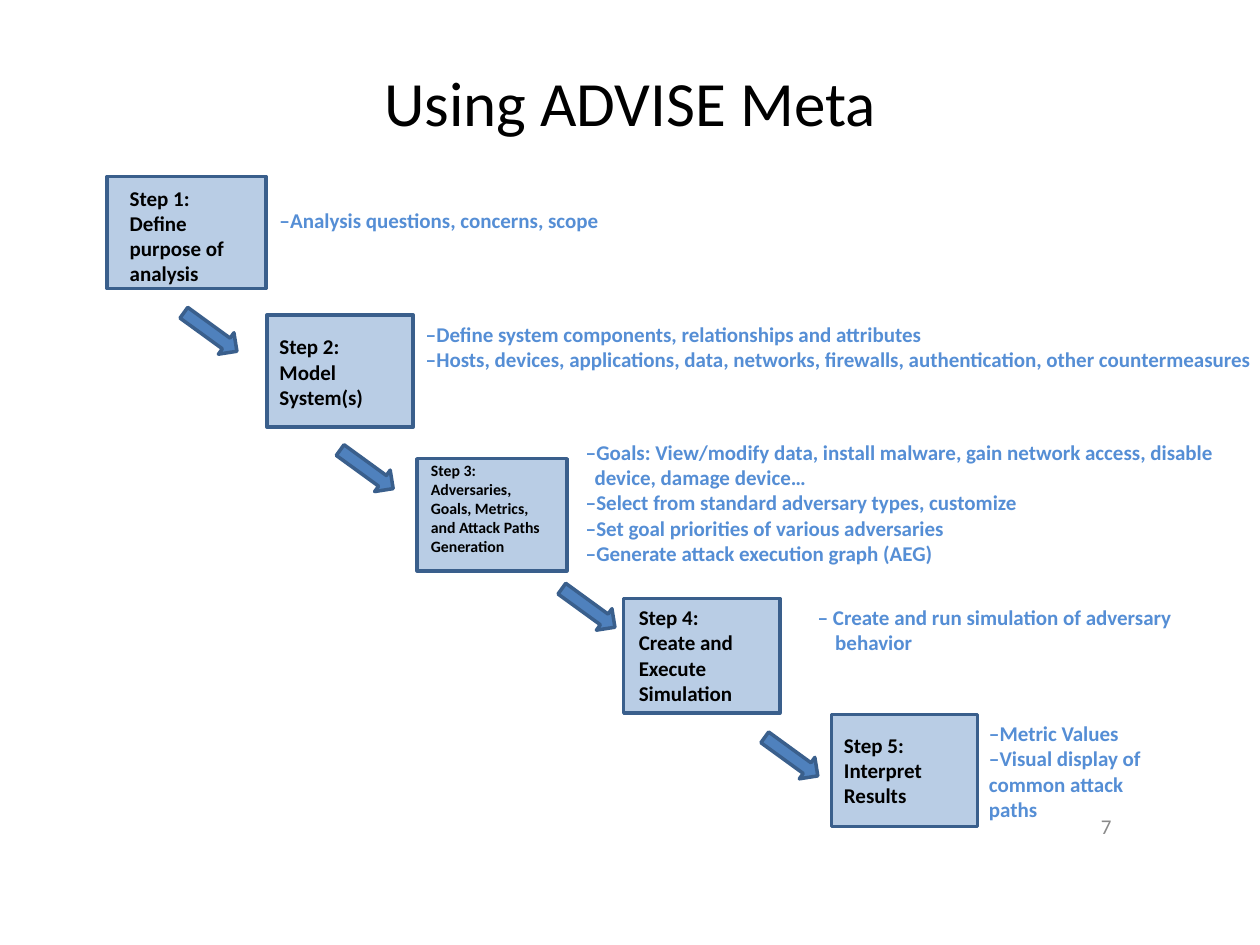
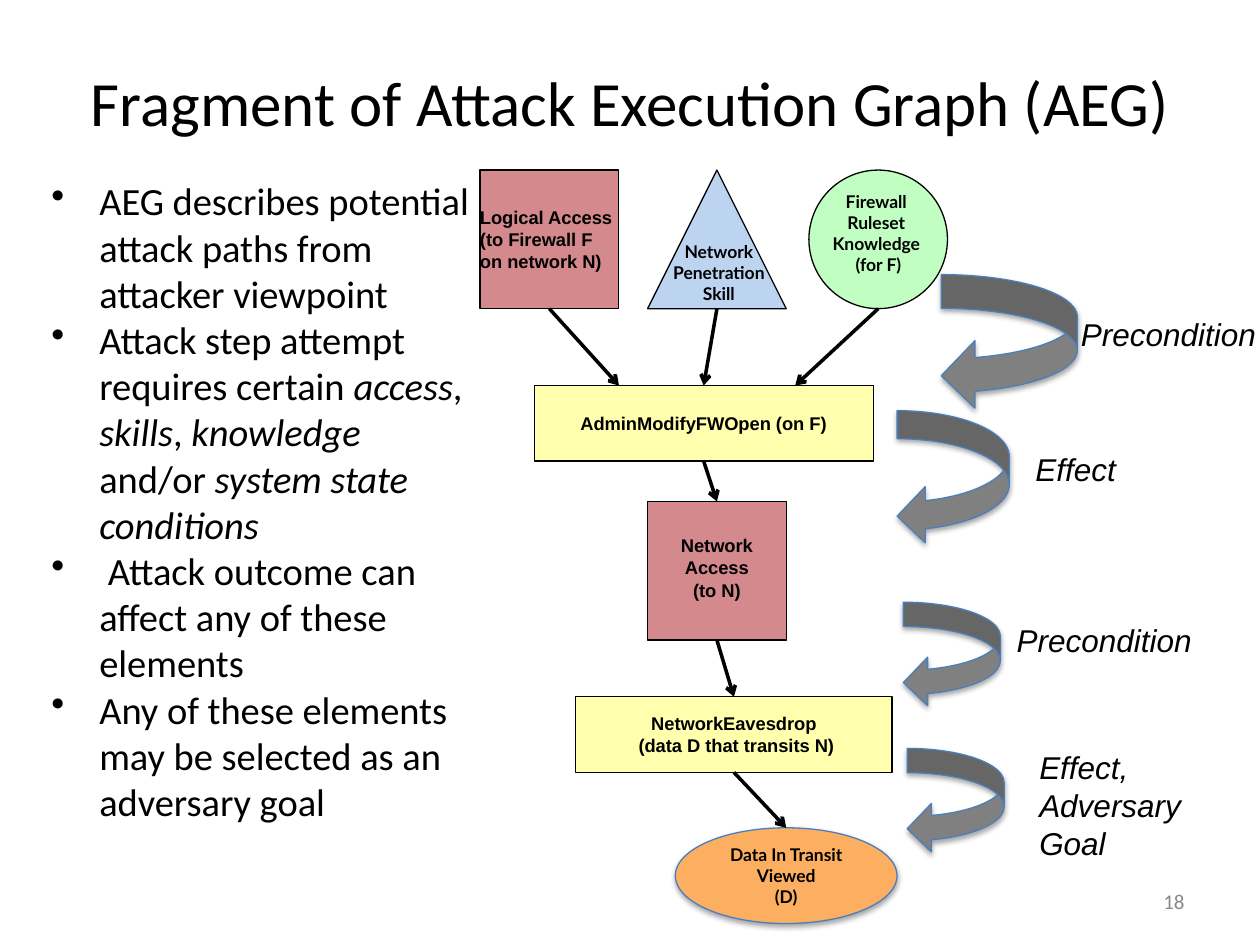
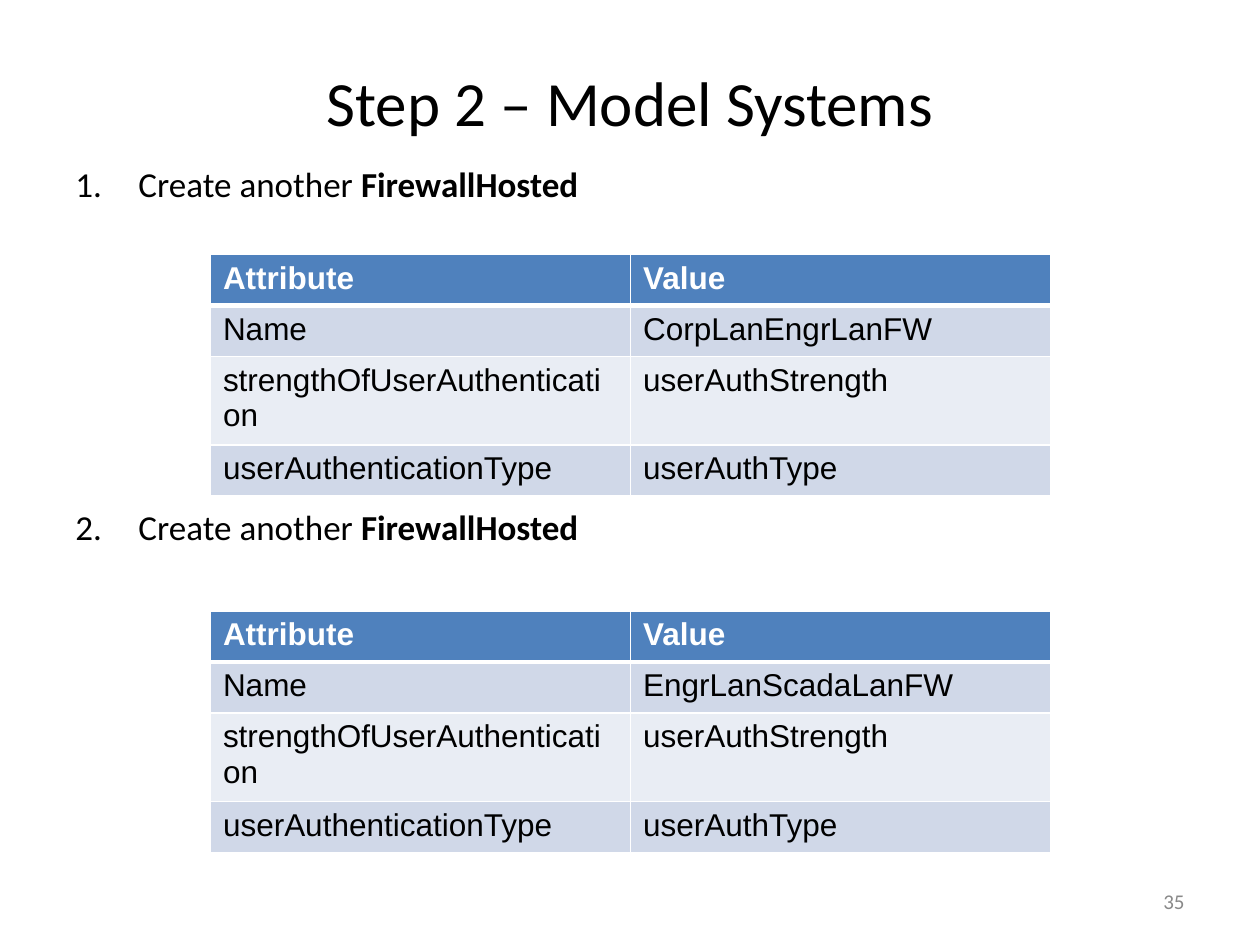
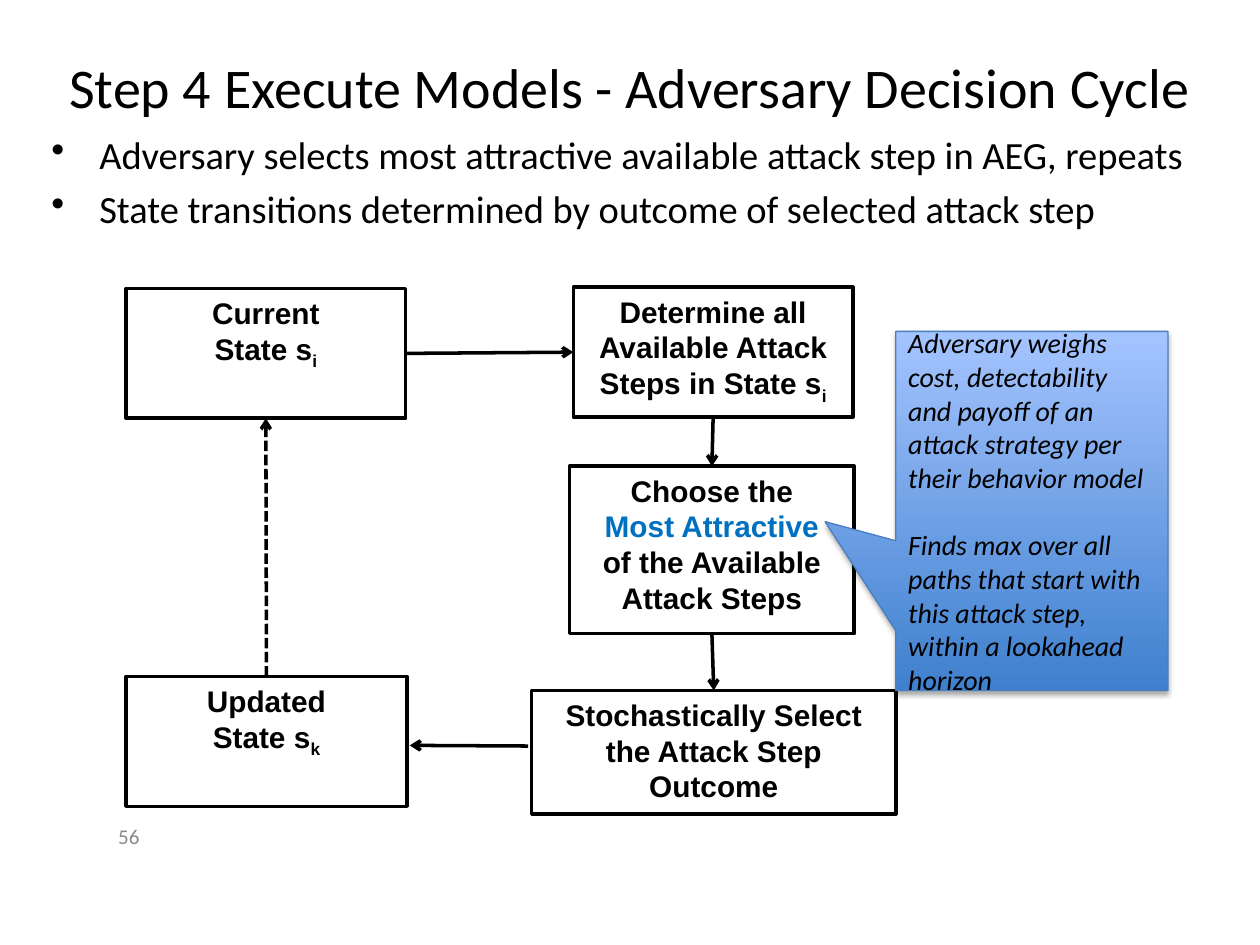
from dataclasses import dataclass

from lxml.etree import SubElement
from pptx import Presentation
from pptx.dml.color import RGBColor
from pptx.enum.dml import MSO_LINE
from pptx.enum.shapes import MSO_CONNECTOR, MSO_SHAPE
from pptx.enum.text import MSO_ANCHOR, PP_ALIGN
from pptx.oxml.ns import qn
from pptx.util import Inches, Pt

SLIDE_WIDTH, SLIDE_HEIGHT = Inches(10), Inches(7.5)
COLUMN, ROW = SLIDE_WIDTH // 100, SLIDE_HEIGHT // 75

BLACK = RGBColor(0x00, 0x00, 0x00)
WHITE = RGBColor(0xFF, 0xFF, 0xFF)
NUMBER_GRAY = RGBColor(0x89, 0x89, 0x89)
ARROW_BLUE = RGBColor(0x4F, 0x81, 0xBD)
STEP_BLUE = RGBColor(0xB9, 0xCD, 0xE5)
STEP_EDGE = RGBColor(0x3A, 0x5F, 0x8C)
NOTE_BLUE = RGBColor(0x55, 0x8E, 0xD5)
ACCENT_EDGE = RGBColor(0x4B, 0x7E, 0xBC)
ATTACK_YELLOW = RGBColor(0xFF, 0xFF, 0xAD)
ACCESS_RED = RGBColor(0xD4, 0x89, 0x8C)
SKILL_BLUE = RGBColor(0xBC, 0xD4, 0xF0)
KNOWLEDGE_GREEN = RGBColor(0xC0, 0xFF, 0xC1)
GOAL_ORANGE = RGBColor(0xFD, 0xAF, 0x61)
CURVE_GRAY = RGBColor(0x80, 0x80, 0x80)
BAND_DARK = RGBColor(0xD0, 0xD8, 0xE8)
BAND_LIGHT = RGBColor(0xE9, 0xED, 0xF4)
HIGHLIGHT_BLUE = RGBColor(0x00, 0x70, 0xC0)
CALLOUT_DARK = RGBColor(0x3F, 0x80, 0xCE)
CALLOUT_LIGHT = RGBColor(0xA4, 0xC4, 0xFF)

DEFAULT_INSETS = (1, 0.5, 1, 0.5)
NODE_TEXT = dict(size=10.5, font="Arial", bold=True, align=PP_ALIGN.CENTER)
LATO_TEXT = dict(NODE_TEXT, size=10, font="Lato")
CYCLE_TEXT = dict(NODE_TEXT, size=17)
NOTE_TEXT = dict(size=12, bold=True, color=NOTE_BLUE)
LABEL_TEXT = dict(size=18, font="Arial", italic=True)
BULLET = ("buChar", "char", "•")
NUMBER = ("buAutoNum", "type", "arabicPeriod")


@dataclass
class Box:
    left: float
    top: float
    width: float
    height: float

    def inside(self, left, top, width, height):
        return Box(self.left + left, self.top + top, width, height)

    def at(self, across, down):
        return (round((self.left + across * self.width) * COLUMN),
                round((self.top + down * self.height) * ROW))

    def frame(self):
        return (*self.at(0, 0), round(self.width * COLUMN), round(self.height * ROW))


@dataclass
class Step:
    box: tuple
    lines: list
    note_box: tuple
    notes: list
    arrow: tuple = None
    insets: tuple = (1.1, 0.5, 1, 0)
    size: float = 12
    hang: float = 0
    note_insets: tuple = DEFAULT_INSETS


STEPS = [
    Step((0, 0, 12.6, 8.9), ["Step 1:", "Define purpose of analysis"],
         (12.7, 2, 36, 3), ["‒Analysis questions, concerns, scope"],
         arrow=(5.6, 11.3), insets=(1.8, 0.7, 0.7, 0)),
    Step((12.7, 11, 11.6, 8.9), ["Step 2:", "Model System(s)"],
         (24.3, 11, 67.2, 5.1),
         ["‒Define system components, relationships and attributes",
          "‒Hosts, devices, applications, data, networks, firewalls, "
          "authentication, other countermeasures"],
         arrow=(18, 22.2), insets=(1, 1.5, 1, 0), note_insets=(1, 0.5, 0, 0.5)),
    Step((24.6, 22.4, 11.9, 8.9),
         ["Step 3:", "Adversaries, Goals, Metrics, and Attack Paths Generation"],
         (37, 20.4, 54.5, 13),
         ["‒Goals: View/modify data, install malware, gain network access, disable\n"
          "device, damage device…",
          "‒Select from standard adversary types, customize",
          "‒Set goal priorities of various adversaries",
          "‒Generate attack execution graph (AEG)"],
         arrow=(35.6, 33.2), insets=(1.1, 0.2, 1, 0), size=9, hang=0.7),
    Step((41, 33.5, 12.4, 9.1), ["Step 4:", "Create and Execute Simulation"],
         (55.4, 33.5, 36.1, 7.1),
         ["‒ Create and run simulation of adversary\nbehavior"],
         arrow=(51.7, 45), insets=(1.2, 0.5, 1.3, 0), hang=1.4),
    Step((57.5, 42.7, 11.6, 8.9), ["Step 5: Interpret Results"],
         (69, 42.7, 16.2, 9.1),
         ["‒Metric Values", "‒Visual display of common attack paths"],
         insets=(1, 1.4, 0.5, 0)),
]


def write(frame, paragraphs, size=12, font="Calibri", color=BLACK, bold=False,
          italic=False, align=PP_ALIGN.LEFT, anchor=MSO_ANCHOR.TOP,
          insets=DEFAULT_INSETS, bullet=None, hang=0, gap=0):
    frame.word_wrap = True
    frame.vertical_anchor = anchor
    left, top, right, bottom = insets
    frame.margin_left, frame.margin_right = round(left * COLUMN), round(right * COLUMN)
    frame.margin_top, frame.margin_bottom = round(top * ROW), round(bottom * ROW)
    for index, content in enumerate(paragraphs):
        paragraph = frame.paragraphs[0] if index == 0 else frame.add_paragraph()
        properties = paragraph._p.get_or_add_pPr()
        if hang:
            properties.set("marL", str(round(hang * COLUMN)))
            properties.set("indent", str(-round(hang * COLUMN)))
        if bullet:
            tag, name, value = bullet
            SubElement(properties, qn("a:" + tag)).set(name, value)
        paragraph.alignment = align
        if index and gap:
            paragraph.space_before = Pt(gap)
        runs = [(content, {})] if isinstance(content, str) else content
        for text, change in runs:
            for line_index, line in enumerate(text.split("\n")):
                if line_index:
                    paragraph.add_line_break()
                if not line:
                    continue
                run = paragraph.add_run()
                run.text = line
                run.font.name = font
                run.font.size = Pt(size)
                run.font.bold = change.get("bold", bold)
                run.font.italic = change.get("italic", italic)
                run.font.color.rgb = change.get("color", color)
                if "baseline" in change:
                    run.font._element.set("baseline", str(change["baseline"]))


def add_text(slide, box, paragraphs, **text_format):
    write(slide.shapes.add_textbox(*box.frame()).text_frame, paragraphs, **text_format)


def add_shadow(shape):
    effects = shape._element.spPr.find(qn("a:effectLst"))
    shadow = SubElement(effects, qn("a:outerShdw"), blurRad=str(Pt(3.1)),
                        dist=str(Pt(1.8)), dir="5400000", rotWithShape="0")
    color = SubElement(shadow, qn("a:srgbClr"), val=str(BLACK))
    SubElement(color, qn("a:alpha"), val="35000")


def add_box(slide, kind, box, fill, edge=BLACK, edge_width=0.75, shadow=False,
            paragraphs=(), **text_format):
    shape = slide.shapes.add_shape(kind, *box.frame())
    shape.shadow.inherit = False
    shape.fill.solid()
    shape.fill.fore_color.rgb = fill
    shape.line.color.rgb = edge
    shape.line.width = Pt(edge_width)
    if shadow:
        add_shadow(shape)
    write(shape.text_frame, paragraphs, **text_format)
    return shape


def add_arrow(slide, start, end, dash=None):
    connector = slide.shapes.add_connector(MSO_CONNECTOR.STRAIGHT, *start, *end)
    connector.line.color.rgb = BLACK
    connector.line.width = Pt(2)
    if dash:
        connector.line.dash_style = dash
    SubElement(connector.line._get_or_add_ln(), qn("a:tailEnd"), type="arrow")
    SubElement(connector._element.spPr, qn("a:effectLst"))


def start_slide(presentation, title, number, title_box=Box(5, 5.3, 90, 5.5), size=36,
                number_box=Box(71.7, 69.5, 23.3, 4), number_align=PP_ALIGN.RIGHT):
    slide = presentation.slides.add_slide(presentation.slide_layouts[6])
    add_text(slide, title_box, [title], size=size, align=PP_ALIGN.CENTER,
             anchor=MSO_ANCHOR.MIDDLE)
    add_text(slide, number_box, [str(number)], color=NUMBER_GRAY, align=number_align,
             anchor=MSO_ANCHOR.MIDDLE)
    return slide


def draw_cascade(slide, box):
    for step in STEPS:
        add_box(slide, MSO_SHAPE.RECTANGLE, box.inside(*step.box), STEP_BLUE,
                edge=STEP_EDGE, edge_width=2, paragraphs=step.lines, size=step.size,
                bold=True, insets=step.insets)
        add_text(slide, box.inside(*step.note_box), step.notes, hang=step.hang,
                 insets=step.note_insets, **NOTE_TEXT)
        if step.arrow:
            arrow = add_box(slide, MSO_SHAPE.RIGHT_ARROW,
                            box.inside(*step.arrow, 5.2, 2.1), ARROW_BLUE,
                            edge=STEP_EDGE, edge_width=2)
            arrow.rotation = 36


def draw_attack_graph(slide, box):
    access = box.inside(0.1, 0, 11, 11)
    skill = box.inside(13.4, 0, 11, 11)
    knowledge = box.inside(26.2, 0, 11, 11)
    modify = box.inside(4.4, 17.1, 26.9, 6)
    network = box.inside(13.4, 26.3, 11, 11)
    eavesdrop = box.inside(7.7, 41.8, 25.1, 6)
    goal = box.inside(15.6, 52.2, 17.6, 7.6)

    middle = dict(NODE_TEXT, anchor=MSO_ANCHOR.MIDDLE)
    add_box(slide, MSO_SHAPE.RECTANGLE, access, ACCESS_RED,
            paragraphs=["Logical Access", "(to Firewall F on network N)"],
            **dict(middle, align=PP_ALIGN.LEFT, insets=(0, 0.5, 0, 0.5)))
    add_box(slide, MSO_SHAPE.ISOSCELES_TRIANGLE, skill, SKILL_BLUE)
    add_text(slide, skill.inside(0.4, 5.1, 10.5, 7.7), ["Network Penetration Skill"],
             **LATO_TEXT)
    add_box(slide, MSO_SHAPE.OVAL, knowledge, KNOWLEDGE_GREEN)
    add_text(slide, knowledge.inside(-1, 1.2, 12.7, 9.4),
             ["Firewall", "Ruleset Knowledge", " (for F)"], **LATO_TEXT)
    add_box(slide, MSO_SHAPE.RECTANGLE, modify, ATTACK_YELLOW,
            paragraphs=["AdminModifyFWOpen (on F)"], **middle)
    add_box(slide, MSO_SHAPE.RECTANGLE, network, ACCESS_RED,
            paragraphs=["Network\nAccess", "(to N)"], insets=(0, 0, 0, 0.5), **middle)
    add_box(slide, MSO_SHAPE.RECTANGLE, eavesdrop, ATTACK_YELLOW,
            paragraphs=["NetworkEavesdrop", " (data D that transits N)"], **middle)
    add_box(slide, MSO_SHAPE.OVAL, goal, GOAL_ORANGE, edge=ACCENT_EDGE, shadow=True,
            paragraphs=["Data In Transit Viewed", "(D)"],
            anchor=MSO_ANCHOR.MIDDLE, **LATO_TEXT)

    for source, target, share in [(access, modify, 0.25), (skill, modify, 0.5),
                                  (knowledge, modify, 0.77), (modify, network, 0.5),
                                  (network, eavesdrop, 0.5), (eavesdrop, goal, 0.5)]:
        add_arrow(slide, source.at(0.5, 1), target.at(share, 0))


def draw_phases(slide, box):
    phases = [
        ((3.5, 0, 10.8, 10.7), "Precondition", (13.6, 2.7, 15.2, 4)),
        ((0, 10.8, 8.9, 10.6), "Effect", (10, 13.4, 9.7, 4)),
        ((0.5, 26, 7.7, 8.3), "Precondition", (8.5, 27, 19.1, 4)),
        ((0.8, 37.6, 7.7, 8.3), "Effect, Adversary Goal", (10.3, 37.1, 15.6, 10.1)),
    ]
    for curve, label, label_box in phases:
        add_box(slide, MSO_SHAPE.CURVED_LEFT_ARROW, box.inside(*curve), CURVE_GRAY,
                edge=ACCENT_EDGE, shadow=True)
        add_text(slide, box.inside(*label_box), [label], insets=(1, 0.5, 0, 0.5),
                 **LABEL_TEXT)


def set_border(cell, side, width):
    line = SubElement(cell._tc.get_or_add_tcPr(), qn("a:" + side), w=str(Pt(width)))
    SubElement(SubElement(line, qn("a:solidFill")), qn("a:srgbClr"), val=str(WHITE))


def draw_attribute_table(slide, box, firewall_name):
    rows = [("Attribute", "Value"),
            ("Name", firewall_name),
            ("strengthOfUserAuthentication", "userAuthStrength"),
            ("userAuthenticationType", "userAuthType")]
    table = slide.shapes.add_table(len(rows), 2, *box.frame()).table
    for row_index, row in enumerate(rows):
        header = row_index == 0
        band = BAND_DARK if row_index % 2 else BAND_LIGHT
        for column_index, text in enumerate(row):
            cell = table.cell(row_index, column_index)
            write(cell.text_frame, [text], size=18, font="Arial", bold=header,
                  color=WHITE if header else BLACK)
            for side in ("lnL", "lnR", "lnT", "lnB"):
                thick = (header and side == "lnB") or (row_index == 1 and side == "lnT")
                set_border(cell, side, 3 if thick else 1)
            cell.fill.solid()
            cell.fill.fore_color.rgb = ARROW_BLUE if header else band


def draw_decision_cycle(slide, box):
    current = box.inside(0, 0.1, 22.2, 10.3)
    determine = box.inside(35.5, 0, 22.2, 10.3)
    choose = box.inside(35.2, 14.2, 22.6, 13.3)
    select = box.inside(32.2, 32, 28.9, 9.8)
    updated = box.inside(0, 30.9, 22.3, 10.3)
    subscript = {"baseline": -25000}
    states = [
        (current, ["Current", [("State s", {}), ("i", subscript)]]),
        (determine, [[("Determine all Available Attack Steps in State s", {}),
                      ("i", subscript)]]),
        (choose, [[("Choose the\n", {}), ("Most Attractive\n", {"color": HIGHLIGHT_BLUE}),
                   ("of the Available Attack Steps", {})]]),
        (select, ["Stochastically Select the Attack Step Outcome"]),
        (updated, ["Updated", [("State s", {}), ("k", subscript)]]),
    ]
    for state_box, paragraphs in states:
        add_box(slide, MSO_SHAPE.RECTANGLE, state_box, WHITE, edge_width=2,
                paragraphs=paragraphs, **CYCLE_TEXT)

    add_arrow(slide, current.at(1, 0.5), determine.at(0, 0.5))
    add_arrow(slide, determine.at(0.5, 1), choose.at(0.5, 0))
    add_arrow(slide, choose.at(0.5, 1), select.at(0.5, 0))
    add_arrow(slide, select.at(-0.01, 0.45), updated.at(1.01, 0.53))
    add_arrow(slide, updated.at(0.5, 0), current.at(0.5, 1), dash=MSO_LINE.SQUARE_DOT)


def draw_callout(slide, box):
    callout = add_box(
        slide, MSO_SHAPE.RECTANGULAR_CALLOUT, box, CALLOUT_DARK, edge=ACCENT_EDGE,
        shadow=True, size=16, italic=True, anchor=MSO_ANCHOR.MIDDLE, gap=19.5,
        paragraphs=["Adversary weighs cost, detectability and payoff of an attack "
                    "strategy per their behavior model",
                    "Finds max over all paths that start with this attack step, "
                    "within a lookahead horizon"])
    callout.adjustments[0], callout.adjustments[1] = -0.76, 0.03
    callout.fill.gradient()
    callout.fill.gradient_angle = 90
    for stop, color in zip(callout.fill.gradient_stops, (CALLOUT_DARK, CALLOUT_LIGHT)):
        stop.color.rgb = color


def build_steps_slide(presentation):
    slide = start_slide(presentation, "Using ADVISE Meta", 7,
                        number_box=Box(65.9, 63.6, 23.3, 4))
    draw_cascade(slide, Box(8.5, 14, 91.5, 52))


def build_graph_slide(presentation):
    slide = start_slide(presentation, "Fragment of Attack Execution Graph (AEG)", 18)
    italic = {"italic": True}
    add_text(slide, Box(3.1, 13.6, 35.2, 55.4), [
        "AEG describes potential attack paths from attacker viewpoint",
        [("Attack step attempt requires certain ", {}), ("access", italic), (", ", {}),
         ("skills", italic), (", ", {}), ("knowledge", italic), (" and/or ", {}),
         ("system state conditions", italic)],
        " Attack outcome can affect any of these elements",
        "Any of these elements may be selected as an adversary goal",
    ], size=22, bullet=BULLET, hang=3.8)
    draw_attack_graph(slide, Box(38, 13.5, 38, 60))
    draw_phases(slide, Box(71.2, 21.8, 28.8, 47.2))


def build_tables_slide(presentation):
    slide = start_slide(presentation, "Step 2 – Model Systems", 35)
    task = [("Create another ", {}), ("FirewallHosted", {"bold": True})]
    add_text(slide, Box(5, 12.4, 90.9, 57.1), [task, task], size=20, bullet=NUMBER,
             hang=5, gap=172)
    for top, firewall_name in ((20.2, "CorpLanEngrLanFW"), (48.5, "EngrLanScadaLanFW")):
        draw_attribute_table(slide, Box(16.7, top, 66.7, 16.2), firewall_name)


def build_cycle_slide(presentation):
    slide = start_slide(presentation, "Step 4 Execute Models - Adversary Decision Cycle",
                        56, title_box=Box(0, 2.7, 100, 8.3), size=32,
                        number_box=Box(8.4, 64.4, 23.3, 4), number_align=PP_ALIGN.LEFT)
    add_text(slide, Box(3.1, 9.9, 94.2, 15.1), [
        "Adversary selects most attractive available attack step in AEG, repeats",
        "State transitions determined by outcome of selected attack step",
    ], size=22, bullet=BULLET, hang=3.8, gap=4.4)
    draw_decision_cycle(slide, Box(10, 22.8, 61.1, 41.8))
    draw_callout(slide, Box(71.1, 26.3, 21.6, 28.5))


def main():
    presentation = Presentation()
    presentation.slide_width, presentation.slide_height = SLIDE_WIDTH, SLIDE_HEIGHT
    build_steps_slide(presentation)
    build_graph_slide(presentation)
    build_tables_slide(presentation)
    build_cycle_slide(presentation)
    presentation.save("out.pptx")


if __name__ == "__main__":
    main()
